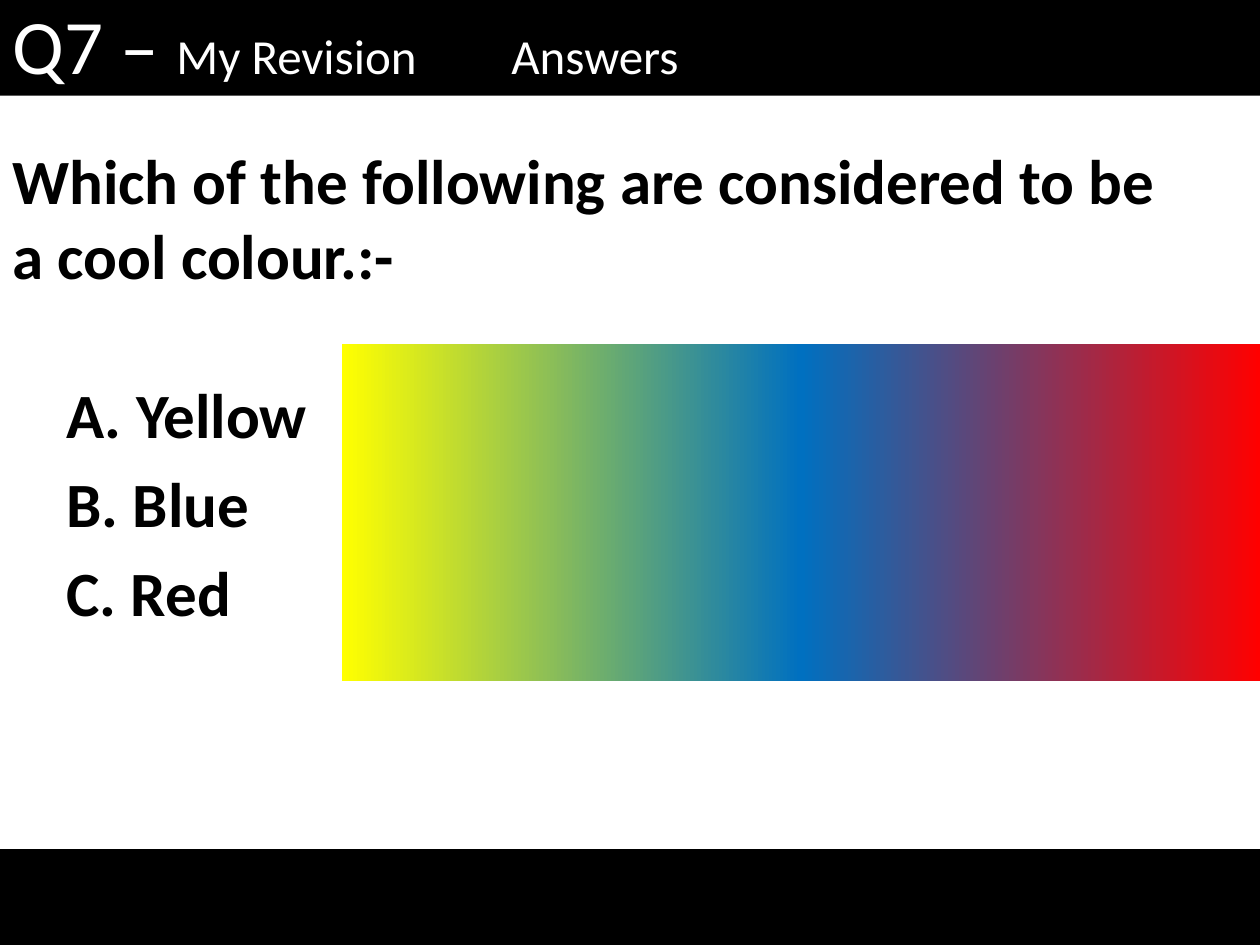
import copy

import pptx
import pptx.dml.color
import pptx.enum.shapes
import pptx.enum.text
import pptx.oxml.ns
import pptx.util
from lxml import etree
from pptx.util import Cm

BLACK = pptx.dml.color.RGBColor(0, 0, 0)
WHITE = pptx.dml.color.RGBColor(255, 255, 255)
YELLOW = pptx.dml.color.RGBColor(255, 255, 0)
BLUE = pptx.dml.color.RGBColor(0, 112, 192)
RED = pptx.dml.color.RGBColor(255, 0, 0)

TITLE = [("Q7 – ", 44), ("My Revision\tAnswers", 28)]
QUESTION = "Which of the following are considered to be a cool colour.:-"
ANSWERS = [("A. Yellow", 10.8), ("B. Blue", 15.6), ("C. Red", 18)]
SPECTRUM = [(0, YELLOW), (0.5, BLUE), (1, RED)]

WIDTH, HEIGHT = 25.4, 19.05
BAR_HEIGHT = 1.93
SPECTRUM_LEFT = 6.9
ANSWER_TOP, ANSWER_HEIGHT = 7.44, 1.8
ANSWERS_TAB = 10.06


def add_span(para, text, size, color, bold=False):
    span = para.add_run()
    span.text = text
    span.font.name = "Calibri"
    span.font.size = pptx.util.Pt(size)
    span.font.bold = bold
    span.font.color.rgb = color


def add_rectangle(slide, left, top, width, height):
    shape = slide.shapes.add_shape(
        pptx.enum.shapes.MSO_SHAPE.RECTANGLE, Cm(left), Cm(top), Cm(width), Cm(height))
    shape.shadow.inherit = False
    shape.line.fill.background()
    return shape


def add_bar(slide, top):
    bar = add_rectangle(slide, 0, top, WIDTH, BAR_HEIGHT)
    bar.fill.solid()
    bar.fill.fore_color.rgb = BLACK
    return bar


def add_spectrum(slide):
    band = add_rectangle(slide, SPECTRUM_LEFT, 6.93, WIDTH - SPECTRUM_LEFT, 6.81)
    band.fill.gradient()
    band.fill.gradient_angle = 0
    stop_list = next(band.element.spPr.iter(pptx.oxml.ns.qn("a:gsLst")))
    stop_list.append(copy.deepcopy(stop_list[0]))
    for stop, (position, color) in zip(band.fill.gradient_stops, SPECTRUM):
        stop.position = position
        stop.color.rgb = color


def add_text(slide, text, left, top, width, height):
    box = slide.shapes.add_textbox(Cm(left), Cm(top), Cm(width), Cm(height))
    box.text_frame.word_wrap = True
    add_span(box.text_frame.paragraphs[0], text, 36, BLACK, bold=True)


def add_title(slide):
    frame = add_bar(slide, 0).text_frame
    frame.vertical_anchor = pptx.enum.text.MSO_ANCHOR.BOTTOM
    para = frame.paragraphs[0]
    para.alignment = pptx.enum.text.PP_ALIGN.LEFT
    tabs = etree.SubElement(para._p.get_or_add_pPr(), pptx.oxml.ns.qn("a:tabLst"))
    etree.SubElement(tabs, pptx.oxml.ns.qn("a:tab"), pos=str(Cm(ANSWERS_TAB)), algn="l")
    for text, size in TITLE:
        add_span(para, text, size, WHITE)


def main():
    deck = pptx.Presentation()
    deck.slide_width, deck.slide_height = Cm(WIDTH), Cm(HEIGHT)
    slide = deck.slides.add_slide(deck.slide_layouts[6])
    add_spectrum(slide)
    add_text(slide, QUESTION, 0, 2.72, 23.8, 3.33)
    for row, (answer, width) in enumerate(ANSWERS):
        add_text(slide, answer, 1.09, ANSWER_TOP + row * ANSWER_HEIGHT, width, ANSWER_HEIGHT)
    add_title(slide)
    add_bar(slide, HEIGHT - BAR_HEIGHT)
    deck.save("out.pptx")


if __name__ == "__main__":
    main()
